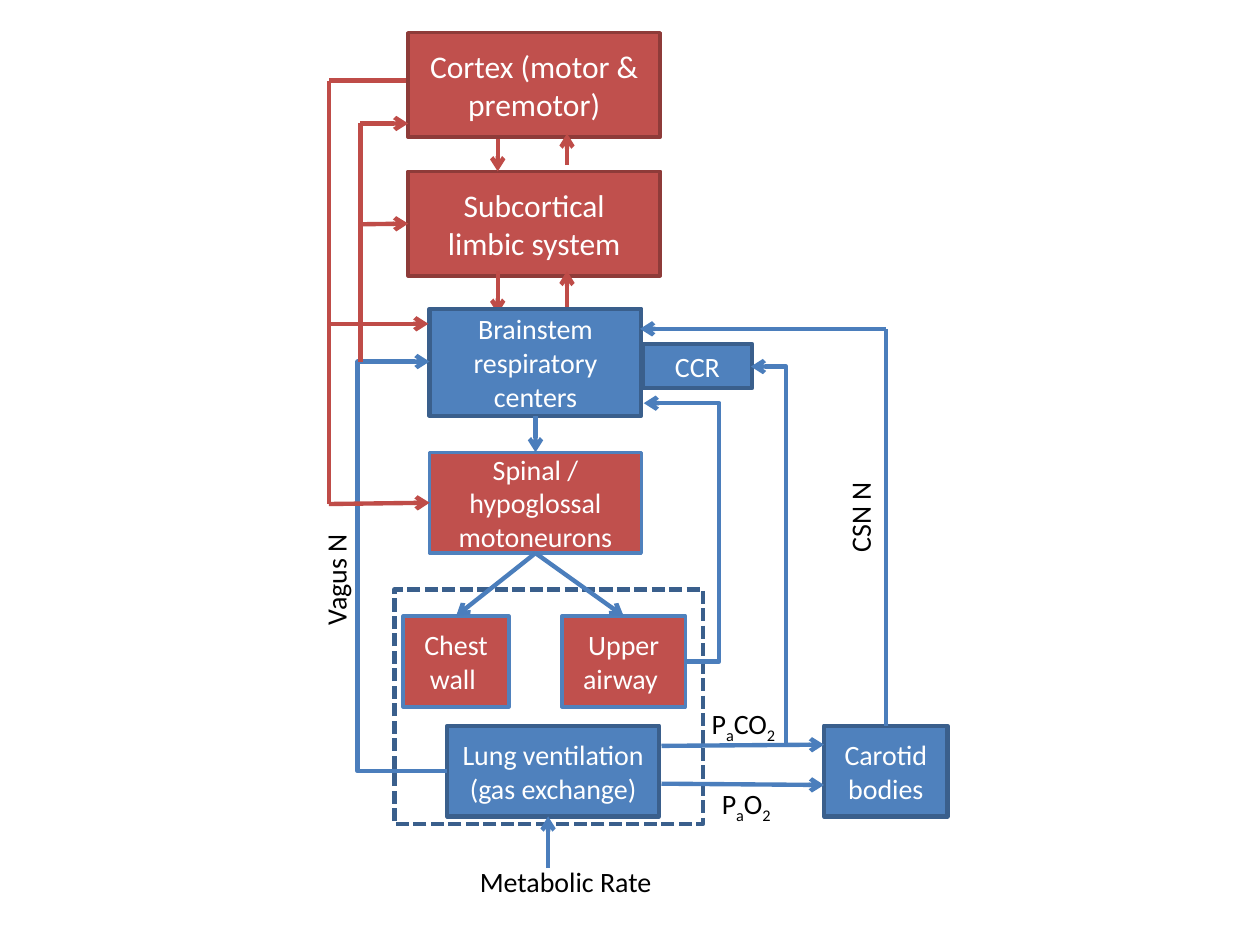
from lxml import etree
from pptx import Presentation
from pptx import util as u
from pptx.dml.color import RGBColor
from pptx.enum import dml, shapes, text
from pptx.oxml.ns import qn

PX = 9144  # EMU per px, 100 px to the inch

RED = RGBColor(0xC0, 0x50, 0x4D)
RED_EDGE = RGBColor(0x8E, 0x3B, 0x39)
RED_LINK = RGBColor(0xBF, 0x4C, 0x48)
BLUE = RGBColor(0x4F, 0x81, 0xBD)
BLUE_EDGE = RGBColor(0x3A, 0x5F, 0x8C)
BLUE_LINK = RGBColor(0x4B, 0x7E, 0xBC)
WHITE = RGBColor(0xFF, 0xFF, 0xFF)
BLACK = RGBColor(0, 0, 0)

CENTRAL = dict(fill=RED, edge=RED_EDGE, weight=2, size=18)
MOTOR = dict(fill=RED, edge=BLUE, weight=2, size=16)
REFLEX = dict(fill=BLUE, edge=BLUE_EDGE, weight=2.5, size=16)

# name: (text, (left, top, width, height), style)
BRAIN_BOXES = {
    "cortex": ("Cortex (motor & premotor)", (324, 26, 200, 83), CENTRAL),
    "limbic": ("Subcortical\nlimbic system", (324, 136, 200, 83), CENTRAL),
}
BODY_BOXES = {
    "brainstem": ("Brainstem respiratory centers", (341, 245, 168, 85), REFLEX),
    "chest": ("Chest wall ", (320, 489, 84, 72), MOTOR),
    "spinal": ("Spinal / hypoglossal motoneurons", (341, 359, 168, 80), MOTOR),
    "airway": ("Upper airway ", (446, 489, 98, 72), MOTOR),
    "lung": ("Lung ventilation (gas exchange)", (355, 576, 168, 72), REFLEX),
    "carotid": ("Carotid bodies", (654, 576, 98, 72), REFLEX),
    "ccr": ("CCR", (510, 273, 87, 35), REFLEX),
}
PERIPHERY_FRAME = (313, 468, 245, 186)

# Ends are (x, y) points or (box name, side); sides: 0 top, 1 left, 2 bottom, 3 right
BRAIN_ARROWS = [
    ((395, 110), (395, 136)),
    ((395, 215), (395, 249)),
    ((450, 131), (450, 106)),
    ((450, 249), (450, 215)),
]
BODY_ARROWS = [
    (("spinal", 2), ("chest", 0)),
    (("spinal", 2), ("airway", 0)),
    (("brainstem", 2), ("spinal", 0)),
    ((525, 592), (654, 591)),
    ((525, 622), (654, 623)),
    ((703, 261), (508, 261)),
    ((435, 689), (435, 648)),
]
BODY_LINES = [(("carotid", 0), (703, 261))]
# from, to, x of the vertical run
BODY_ELBOWS = [
    ((355, 612), (341, 287), 284),
    ((624, 591), (596, 291), 624),
    ((544, 525), (511, 320), 571),
]
DESCENDING_LINES = [
    ((322, 64), (261, 64)),
    ((261, 64), (261, 400)),
    ((286, 98), (286, 287)),
]
DESCENDING_ARROWS = [
    ((261, 400), ("spinal", 1)),
    ((261, 257), (340, 257)),
    ((286, 98), (324, 98)),
    ((286, 178), ("limbic", 1)),
]

# text (parts between underscores are subscripts), place, rotation
LABELS = [
    ("Metabolic Rate", (371, 681, 158, 37), 0),
    ("Vagus N", (220, 441, 93, 37), 270),
    ("P_a_O_2", (563, 619, 61, 37), 0),
    ("P_a_CO_2", (555, 556, 73, 37), 0),
    ("CSN N", (644, 391, 77, 37), 270),
]


def px(*values):
    return [u.Emu(value * PX) for value in values]


def write(paragraph, content, size, color, align=None):
    """Fill a paragraph; every second underscore-separated part is a subscript."""
    paragraph.alignment = align
    for index, part in enumerate(content.split("_")):
        run = paragraph.add_run()
        run.text = part
        run.font.name = "Calibri"
        run.font.size = u.Pt(size)
        run.font.color.rgb = color
        if index % 2:
            run._r.get_or_add_rPr().set("baseline", "-25000")


def add_rectangle(slide, place, edge, weight, fill=None):
    shape = slide.shapes.add_shape(shapes.MSO_SHAPE.RECTANGLE, *px(*place))
    shape.shadow.inherit = False
    if fill is None:
        shape.fill.background()
    else:
        shape.fill.solid()
        shape.fill.fore_color.rgb = fill
    shape.line.color.rgb = edge
    shape.line.width = u.Pt(weight)
    return shape


def add_boxes(slide, content):
    boxes = {}
    for name, (words, place, style) in content.items():
        shape = add_rectangle(slide, place, style["edge"], style["weight"], style["fill"])
        frame = shape.text_frame
        frame.word_wrap = True
        frame.vertical_anchor = text.MSO_ANCHOR.MIDDLE
        for index, line in enumerate(words.split("\n")):
            paragraph = frame.add_paragraph() if index else frame.paragraphs[0]
            write(paragraph, line, style["size"], WHITE, text.PP_ALIGN.CENTER)
        boxes[name] = shape
    return boxes


def add_link(slide, boxes, start, end, color, arrow=True, via_x=None):
    """Draw a straight link, or an elbow whose vertical run lies at via_x."""
    kind = shapes.MSO_CONNECTOR.STRAIGHT if via_x is None else shapes.MSO_CONNECTOR.ELBOW
    points = [(0, 0) if isinstance(point[0], str) else point for point in (start, end)]
    connector = slide.shapes.add_connector(kind, *px(*points[0], *points[1]))
    for point, connect in ((start, connector.begin_connect), (end, connector.end_connect)):
        if isinstance(point[0], str):
            connect(boxes[point[0]], point[1])
    connector.line.color.rgb = color
    connector.line.width = u.Pt(2.5)
    properties = connector._element.spPr
    if arrow:
        etree.SubElement(properties.find(qn("a:ln")), qn("a:tailEnd"), type="arrow")
    if via_x is not None:
        share = round((via_x - start[0]) / (end[0] - start[0]) * 100000)
        adjustments = properties.find(qn("a:prstGeom")).find(qn("a:avLst"))
        etree.SubElement(adjustments, qn("a:gd"), name="adj1", fmla=f"val {share}")
    etree.SubElement(properties, qn("a:effectLst"))


def add_label(slide, content, place, rotation):
    box = slide.shapes.add_textbox(*px(*place))
    box.rotation = rotation
    box.text_frame.word_wrap = False
    box.text_frame.auto_size = text.MSO_AUTO_SIZE.SHAPE_TO_FIT_TEXT
    write(box.text_frame.paragraphs[0], content, 16, BLACK)


def main():
    presentation = Presentation()
    presentation.slide_width, presentation.slide_height = px(1000, 750)
    slide = presentation.slides.add_slide(presentation.slide_layouts[6])

    boxes = add_boxes(slide, BRAIN_BOXES)
    for start, end in BRAIN_ARROWS:
        add_link(slide, boxes, start, end, RED_LINK)

    boxes.update(add_boxes(slide, BODY_BOXES))
    frame = add_rectangle(slide, PERIPHERY_FRAME, BLUE_EDGE, 2.5)
    frame.line.dash_style = dml.MSO_LINE.SQUARE_DOT
    for start, end, via_x in BODY_ELBOWS:
        add_link(slide, boxes, start, end, BLUE_LINK, via_x=via_x)

    for links, color, arrow in (
        (BODY_ARROWS, BLUE_LINK, True),
        (BODY_LINES, BLUE_LINK, False),
        (DESCENDING_LINES, RED_LINK, False),
        (DESCENDING_ARROWS, RED_LINK, True),
    ):
        for start, end in links:
            add_link(slide, boxes, start, end, color, arrow)

    for label in LABELS:
        add_label(slide, *label)
    presentation.save("out.pptx")


if __name__ == "__main__":
    main()
